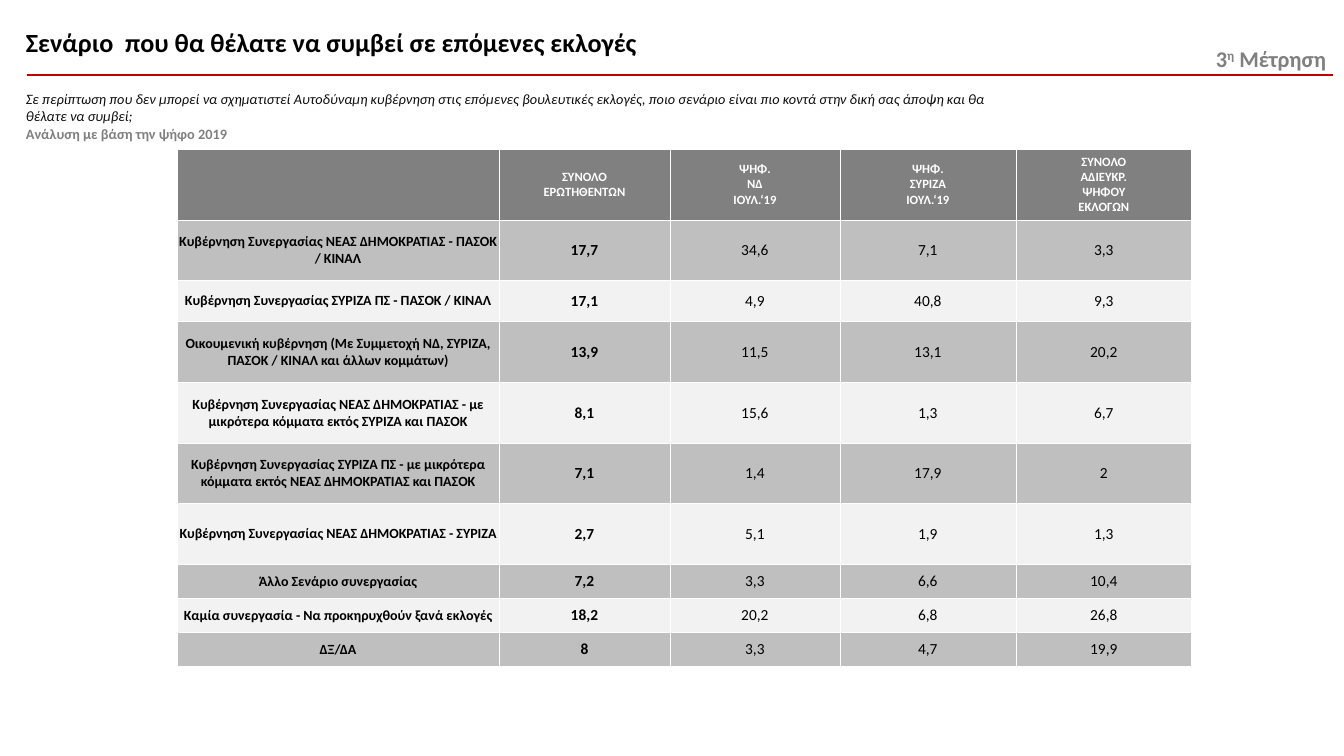
"""Build the slide on preferred election scenarios by 2019 vote."""
from dataclasses import dataclass

from lxml import etree
from pptx import Presentation
from pptx.dml.color import RGBColor
from pptx.enum.shapes import MSO_CONNECTOR
from pptx.enum.text import MSO_ANCHOR, MSO_AUTO_SIZE, PP_ALIGN
from pptx.oxml.ns import qn
from pptx.util import Pt

STRAIGHT = MSO_CONNECTOR.STRAIGHT
MIDDLE = MSO_ANCHOR.MIDDLE
CENTER = PP_ALIGN.CENTER
GROW = MSO_AUTO_SIZE.SHAPE_TO_FIT_TEXT


@dataclass(frozen=True)
class Theme:
    font: str = "Calibri"
    black: str = "000000"
    ink: str = "0D0D0D"
    grey: str = "808080"
    red: str = "C00000"
    white: str = "FFFFFF"
    bands: tuple = ("BFBFBF", "F2F2F2")
    title_size: float = 18.7
    label_size: float = 16
    value_size: float = 11
    question_size: float = 10.2
    scenario_size: float = 10
    header_size: float = 9


theme = Theme()


def px(length):
    return round(length * 914400 / 100.8)


def add_run(paragraph, text, size, color, bold=True, italic=False):
    run = paragraph.add_run()
    run.text = text
    run.font.name = theme.font
    run.font.size = Pt(size)
    run.font.color.rgb = RGBColor.from_string(color)
    run.font.bold = bold
    run.font.italic = italic
    return run


presentation = Presentation()
presentation.slide_width = px(1344)
presentation.slide_height = px(756)
slide = presentation.slides.add_slide(presentation.slide_layouts[6])

rule = slide.shapes.add_connector(STRAIGHT, px(27), px(75), px(1333), px(75))
rule.line.color.rgb = RGBColor.from_string(theme.red)
rule.line.width = Pt(1.5)
etree.SubElement(rule._element.spPr, qn("a:effectLst"))

wave_label = slide.shapes.add_textbox(px(1206), px(40), px(138), px(37))
wave_label.text_frame.word_wrap = False
wave_label.text_frame.auto_size = GROW
wave_paragraph = wave_label.text_frame.paragraphs[0]
add_run(wave_paragraph, "3", theme.label_size, theme.grey)
ordinal = add_run(wave_paragraph, "η", theme.label_size, theme.grey)
ordinal._r.get_or_add_rPr().set("baseline", "30000")
add_run(wave_paragraph, " Μέτρηση", theme.label_size, theme.grey)

headers = [
    [],
    ["ΣΥΝΟΛΟ", "ΕΡΩΤΗΘΕΝΤΩΝ"],
    ["ΨΗΦ.", "ΝΔ", "ΙΟΥΛ.‘19"],
    ["ΨΗΦ.", "ΣΥΡΙΖΑ", "ΙΟΥΛ.‘19"],
    ["ΣΥΝΟΛΟ", "ΑΔΙΕΥΚΡ.", "ΨΗΦΟΥ", "ΕΚΛΟΓΩΝ"],
]
scenarios = [
    ("Κυβέρνηση Συνεργασίας ΝΕΑΣ ΔΗΜΟΚΡΑΤΙΑΣ - ΠΑΣΟΚ / ΚΙΝΑΛ", "17,7", "34,6", "7,1", "3,3"),
    ("Κυβέρνηση Συνεργασίας ΣΥΡΙΖΑ ΠΣ - ΠΑΣΟΚ / ΚΙΝΑΛ", "17,1", "4,9", "40,8", "9,3"),
    ("Οικουμενική κυβέρνηση (Με Συμμετοχή ΝΔ, ΣΥΡΙΖΑ, ΠΑΣΟΚ / ΚΙΝΑΛ και άλλων κομμάτων)",
     "13,9", "11,5", "13,1", "20,2"),
    ("Κυβέρνηση Συνεργασίας ΝΕΑΣ ΔΗΜΟΚΡΑΤΙΑΣ - με μικρότερα κόμματα εκτός ΣΥΡΙΖΑ και ΠΑΣΟΚ",
     "8,1", "15,6", "1,3", "6,7"),
    ("Κυβέρνηση Συνεργασίας ΣΥΡΙΖΑ ΠΣ - με μικρότερα κόμματα εκτός ΝΕΑΣ ΔΗΜΟΚΡΑΤΙΑΣ και ΠΑΣΟΚ",
     "7,1", "1,4", "17,9", "2"),
    ("Κυβέρνηση Συνεργασίας ΝΕΑΣ ΔΗΜΟΚΡΑΤΙΑΣ - ΣΥΡΙΖΑ", "2,7", "5,1", "1,9", "1,3"),
    ("Άλλο Σενάριο συνεργασίας", "7,2", "3,3", "6,6", "10,4"),
    ("Καμία συνεργασία - Να προκηρυχθούν ξανά εκλογές", "18,2", "20,2", "6,8", "26,8"),
    ("ΔΞ/ΔΑ", "8", "3,3", "4,7", "19,9"),
]
rows = [headers] + [[[text] for text in scenario] for scenario in scenarios]
column_widths = [322, 171, 170, 176, 176]
row_heights = [71, 60, 41, 61, 61, 60, 61, 34, 34, 34]

table = slide.shapes.add_table(
    len(rows), len(headers), px(177), px(149), px(sum(column_widths)), px(sum(row_heights))
).table
for column, width in zip(table.columns, column_widths):
    column.width = px(width)
for row, height in zip(table.rows, row_heights):
    row.height = px(height)

for row_index, row_texts in enumerate(rows):
    is_header = row_index == 0
    for column_index, lines in enumerate(row_texts):
        cell = table.cell(row_index, column_index)
        cell.vertical_anchor = MIDDLE
        if not is_header:
            cell.margin_left = cell.margin_right = cell.margin_top = px(1)
            cell.margin_bottom = 0

        properties = cell._tc.get_or_add_tcPr()
        for side in ("L", "R", "T", "B"):
            border = etree.SubElement(properties, qn(f"a:ln{side}"), w=str(Pt(0.5)))
            border_fill = etree.SubElement(border, qn("a:solidFill"))
            etree.SubElement(border_fill, qn("a:srgbClr"), val=theme.white)
        cell.fill.solid()
        cell_color = theme.grey if is_header else theme.bands[(row_index - 1) % 2]
        cell.fill.fore_color.rgb = RGBColor.from_string(cell_color)

        if is_header:
            size, color = theme.header_size, theme.white
        else:
            size = theme.value_size if column_index else theme.scenario_size
            color = theme.black
        for line_index, line in enumerate(lines):
            frame = cell.text_frame
            paragraph = frame.add_paragraph() if line_index else frame.paragraphs[0]
            paragraph.alignment = CENTER
            if is_header:
                indent = px(38)
                paragraph_properties = paragraph._p.get_or_add_pPr()
                paragraph_properties.set("marL", str(indent))
                paragraph_properties.set("indent", str(-indent))
            add_run(paragraph, line, size, color, bold=is_header or column_index < 2)

heading = slide.shapes.add_textbox(px(16), px(23), px(1020), px(126)).text_frame
heading.word_wrap = True
heading.vertical_anchor = MIDDLE
title = heading.paragraphs[0]
title.line_spacing = 0.9
add_run(title, "Σενάριο  που θα θέλατε να συμβεί σε επόμενες εκλογές", theme.title_size, theme.black)
question = heading.add_paragraph()
question.space_before = Pt(23)
add_run(
    question,
    "Σε περίπτωση που δεν μπορεί να σχηματιστεί Αυτοδύναμη κυβέρνηση στις επόμενες "
    "βουλευτικές εκλογές, ποιο σενάριο είναι πιο κοντά στην δική σας άποψη και θα "
    "θέλατε να συμβεί;",
    theme.question_size, theme.ink, bold=False, italic=True,
)
basis = heading.add_paragraph()
add_run(basis, "Ανάλυση με βάση την ψήφο 2019", theme.question_size, theme.grey)

presentation.save("out.pptx")
